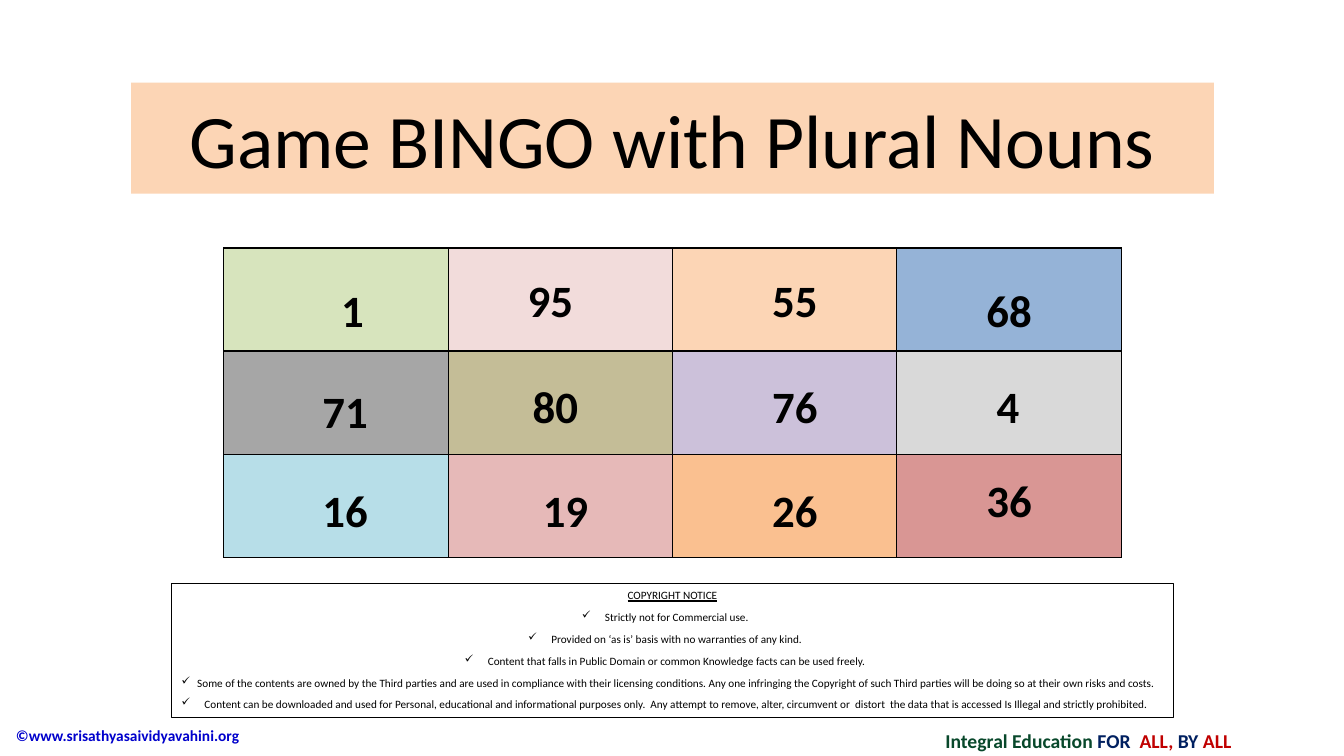
from lxml.etree import SubElement
from pptx import Presentation
from pptx.dml.color import RGBColor
from pptx.enum.shapes import MSO_SHAPE
from pptx.enum.text import MSO_ANCHOR, PP_ALIGN
from pptx.oxml import parse_xml
from pptx.oxml.ns import nsdecls, qn
from pptx.util import Inches, Pt

COLORS = {
    "black": "000000", "peach": "FCD5B5", "web": "0000CC", "green": "08482B",
    "navy": "002060", "red": "C00000",
}
COL_W, ROW_H = 2.225, 1.023
GRID_X, GRID_Y = 2.22, 2.46

# Each bingo square: number, fill, then left and top inside the square, and width.
BINGO = [
    [("1", "D7E4BD", 1.03, 0.30, 0.49), ("95", "F2DCDB", 0.69, 0.20, 0.99),
     ("55", "FCD5B5", 0.89, 0.20, 0.69), ("68", "95B3D7", 0.79, 0.30, 0.79)],
    [("71", "A6A6A6", 0.88, 0.27, 0.79), ("80", "C4BD97", 0.74, 0.22, 0.89),
     ("76", "CCC1DA", 0.89, 0.22, 0.69), ("4", "D9D9D9", 0.89, 0.22, 0.59)],
    [("16", "B7DEE8", 0.88, 0.23, 0.79), ("19", "E6B9B8", 0.84, 0.23, 0.69),
     ("26", "FAC090", 0.89, 0.23, 0.69), ("36", "D99694", 0.79, 0.13, 0.79)],
]
NOTICE = [
    "COPYRIGHT NOTICE",
    "Strictly not for Commercial use.",
    "Provided on ‘as is’ basis with no warranties of any kind.",
    "Content that falls in Public Domain or common Knowledge facts can be used freely.",
    "Some of the contents are owned by the Third parties and are used in compliance with "
    "their licensing conditions. Any one infringing the Copyright of such Third parties "
    "will be doing so at their own risks and costs.",
    "Content can be downloaded and used for Personal, educational and informational "
    "purposes only.  Any attempt to remove, alter, circumvent or  distort  the data that "
    "is accessed Is Illegal and strictly prohibited.",
]
SLOGAN = [("Integral Education ", "green"), ("FOR  ", "navy"), ("ALL, ", "red"),
          ("BY", "navy"), (" ALL", "red")]


def add_run(p, text, size, color="black", bold=False, underline=False):
    r = p.add_run()
    r.text = text
    r.font.name = "Calibri"
    r.font.size = Pt(size)
    r.font.bold = bold
    r.font.underline = underline
    r.font.color.rgb = RGBColor.from_string(COLORS[color])


def add_box(x, y, w, h, anchor=MSO_ANCHOR.TOP):
    """Add a wrapping text box and return its text frame."""
    tf = s.shapes.add_textbox(Inches(x), Inches(y), Inches(w), Inches(h)).text_frame
    tf.word_wrap = True
    tf.vertical_anchor = anchor
    return tf


prs = Presentation()
prs.slide_width, prs.slide_height = Inches(13.33), Inches(7.5)
s = prs.slides.add_slide(prs.slide_layouts[0])
subtitle = s.placeholders[1].element
subtitle.getparent().remove(subtitle)

# Footer
tf = add_box(0.06, 7.1, 3.53, 0.4, MSO_ANCHOR.MIDDLE)
add_run(tf.paragraphs[0], "©www.srisathyasaividyavahini.org", 11, "web", bold=True)

tf = add_box(8.35, 7.19, 4.89, 0.31, MSO_ANCHOR.MIDDLE)
tf.margin_top = tf.margin_bottom = 0
p = tf.paragraphs[0]
p.alignment = PP_ALIGN.CENTER
for words, color in SLOGAN:
    add_run(p, words, 14, color, bold=True)

# Copyright notice
sp = s.shapes.add_shape(MSO_SHAPE.RECTANGLE, Inches(1.7), Inches(5.79), Inches(9.94), Inches(1.33))
sp.shadow.inherit = False
sp.fill.background()
sp.line.color.rgb = RGBColor.from_string(COLORS["black"])
sp.line.width = Pt(0.75)
tf = sp.text_frame
tf.word_wrap = True
tf.vertical_anchor = MSO_ANCHOR.TOP
for i, line in enumerate(NOTICE):
    p = tf.add_paragraph() if i else tf.paragraphs[0]
    p.alignment = PP_ALIGN.CENTER
    p.space_after = Pt(6)
    if i:
        pPr = p._p.get_or_add_pPr()
        pPr.set("marL", str(Inches(0.07)))
        pPr.set("indent", str(-Inches(0.23)))
        SubElement(pPr, qn("a:buChar"), char="✓")
    add_run(p, line, 8, underline=i == 0)

# Title
title = s.shapes.title
title.left, title.top, title.width, title.height = map(Inches, (1.3, 0.82, 10.74, 1.1))
title.fill.solid()
title.fill.fore_color.rgb = RGBColor.from_string(COLORS["peach"])
title.text_frame.vertical_anchor = MSO_ANCHOR.MIDDLE
p = title.text_frame.paragraphs[0]
p.alignment = PP_ALIGN.CENTER
add_run(p, "Game BINGO with Plural Nouns", 54)

# Bingo card
rows, cols = len(BINGO), len(BINGO[0])
table = s.shapes.add_table(rows, cols, Inches(GRID_X), Inches(GRID_Y),
                           Inches(cols * COL_W), Inches(rows * ROW_H)).table
table.first_row = table.horz_banding = False
for i, row in enumerate(BINGO):
    for j, (number, fill, dx, dy, width) in enumerate(row):
        cell = table.cell(i, j)
        tcPr = cell._tc.get_or_add_tcPr()
        for side in ("lnL", "lnR", "lnT", "lnB"):
            tcPr.append(parse_xml(
                f'<a:{side} {nsdecls("a")} w="{Pt(1)}"><a:solidFill>'
                f'<a:srgbClr val="{COLORS["black"]}"/></a:solidFill></a:{side}>'))
        cell.fill.solid()
        cell.fill.fore_color.rgb = RGBColor.from_string(fill)

        tf = add_box(GRID_X + j * COL_W + dx, GRID_Y + i * ROW_H + dy, width, 0.64)
        p = tf.paragraphs[0]
        p.alignment = PP_ALIGN.CENTER if number == "1" else PP_ALIGN.LEFT
        add_run(p, number, 32, bold=True)

prs.save("out.pptx")
